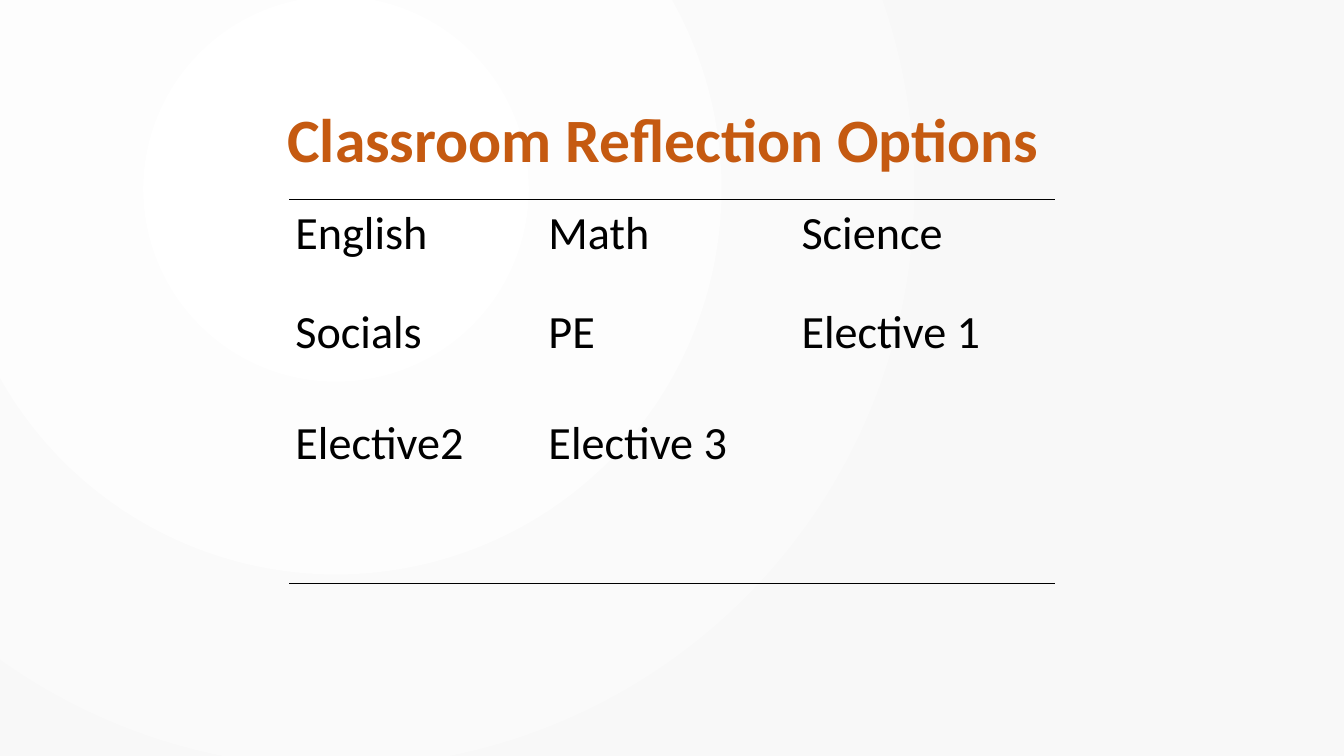
"""Build the slide that lists the classroom reflection options."""
from dataclasses import dataclass

from lxml.etree import SubElement
from pptx import Presentation
from pptx.dml.color import RGBColor
from pptx.enum.text import MSO_ANCHOR as Anchor, MSO_AUTO_SIZE as AutoSize, PP_ALIGN as Align
from pptx.oxml.ns import qn
from pptx.slide import Slide
from pptx.table import _Cell as Cell
from pptx.text.text import Font
from pptx.util import Inches, Pt

SLIDE_WIDTH, SLIDE_HEIGHT = Inches(13.33), Inches(7.5)
ORANGE = RGBColor(0xC5, 0x5A, 0x11)
BLACK = RGBColor(0x00, 0x00, 0x00)
WHITE = RGBColor(0xFF, 0xFF, 0xFF)
PALE_GREY = RGBColor(0xF8, 0xF8, 0xF8)
FONT_NAME = "Calibri"
RULE_WIDTH = Pt(1)
CELL_MARGIN = Inches(0.06)


@dataclass(frozen=True)
class SubjectRow:
    """Subjects that share a table row, and the row's height in inches."""

    height: float
    subjects: tuple[str, ...]


COLUMN_WIDTHS = (2.51, 2.51, 2.57)
SUBJECT_ROWS = (
    SubjectRow(0.98, ("English", "Math", "Science")),
    SubjectRow(1.1, ("Socials", "PE", "Elective 1")),
    SubjectRow(1.73, ("Elective2", "Elective 3", "")),
)


def style_font(font: Font, size: float, color: RGBColor, bold: bool = False) -> None:
    """Set the face, size, colour and weight of a font."""
    font.name, font.size, font.bold = FONT_NAME, Pt(size), bold
    font.color.rgb = color


def paint_background(slide: Slide) -> None:
    """Fill the background with a circular glow in the upper left."""
    fill = slide.background.fill
    fill.gradient()
    for stop, color in zip(fill.gradient_stops, (WHITE, PALE_GREY)):
        stop.color.rgb = color
    linear = slide.element.find(f".//{qn('a:lin')}")
    gradient = linear.getparent()
    gradient.remove(linear)
    glow = SubElement(gradient, qn("a:path"), {"path": "circle"})
    SubElement(glow, qn("a:fillToRect"), {"l": "50000", "t": "50000", "r": "100000", "b": "100000"})


def add_heading(slide: Slide, text: str) -> None:
    """Place and format the slide title."""
    heading = slide.shapes.title
    heading.left, heading.top = int(SLIDE_WIDTH * 0.2063), int(SLIDE_HEIGHT * 0.1373)
    heading.width, heading.height = int(SLIDE_WIDTH * 0.5874), int(SLIDE_HEIGHT * 0.184)
    frame = heading.text_frame
    frame.text = text
    frame.auto_size, frame.vertical_anchor = AutoSize.NONE, Anchor.TOP
    paragraph = frame.paragraphs[0]
    paragraph.alignment, paragraph.line_spacing = Align.LEFT, 0.9
    style_font(paragraph.font, 44, ORANGE, bold=True)


def set_borders(cell: Cell, ruled_sides: set[str]) -> None:
    """Draw a black rule on the given sides and clear the others."""
    properties = cell._tc.get_or_add_tcPr()
    for side in "LRTB":
        border = SubElement(properties, qn(f"a:ln{side}"), {"w": str(RULE_WIDTH)})
        if side in ruled_sides:
            solid = SubElement(border, qn("a:solidFill"))
            SubElement(solid, qn("a:srgbClr"), {"val": str(BLACK)})
        else:
            SubElement(border, qn("a:noFill"))


def fill_cell(cell: Cell, subject: str, ruled_sides: set[str]) -> None:
    """Write one subject into a clear cell."""
    set_borders(cell, ruled_sides)
    cell.fill.background()
    cell.margin_left = cell.margin_right = CELL_MARGIN
    cell.margin_top = cell.margin_bottom = CELL_MARGIN
    cell.text = subject
    style_font(cell.text_frame.paragraphs[0].font, 33, BLACK)


def add_subjects(slide: Slide) -> None:
    """Add the table of subjects, ruled above and below."""
    table = slide.shapes.add_table(
        len(SUBJECT_ROWS), len(COLUMN_WIDTHS),
        int(SLIDE_WIDTH * 0.2153), int(SLIDE_HEIGHT * 0.264),
        Inches(sum(COLUMN_WIDTHS)), Inches(sum(row.height for row in SUBJECT_ROWS)),
    ).table
    table.first_row = table.horz_banding = False
    for column, width in zip(table.columns, COLUMN_WIDTHS):
        column.width = Inches(width)
    last = len(SUBJECT_ROWS) - 1
    for index, subject_row in enumerate(SUBJECT_ROWS):
        table.rows[index].height = Inches(subject_row.height)
        ruled_sides = {0: {"T"}, last: {"B"}}.get(index, set())
        for cell, subject in zip(table.rows[index].cells, subject_row.subjects):
            fill_cell(cell, subject, ruled_sides)


def main() -> None:
    """Build and save the presentation."""
    presentation = Presentation()
    presentation.slide_width, presentation.slide_height = SLIDE_WIDTH, SLIDE_HEIGHT
    slide = presentation.slides.add_slide(presentation.slide_layouts.get_by_name("Title Only"))
    paint_background(slide)
    add_heading(slide, "Classroom Reflection Options")
    add_subjects(slide)
    presentation.save("out.pptx")


if __name__ == "__main__":
    main()
